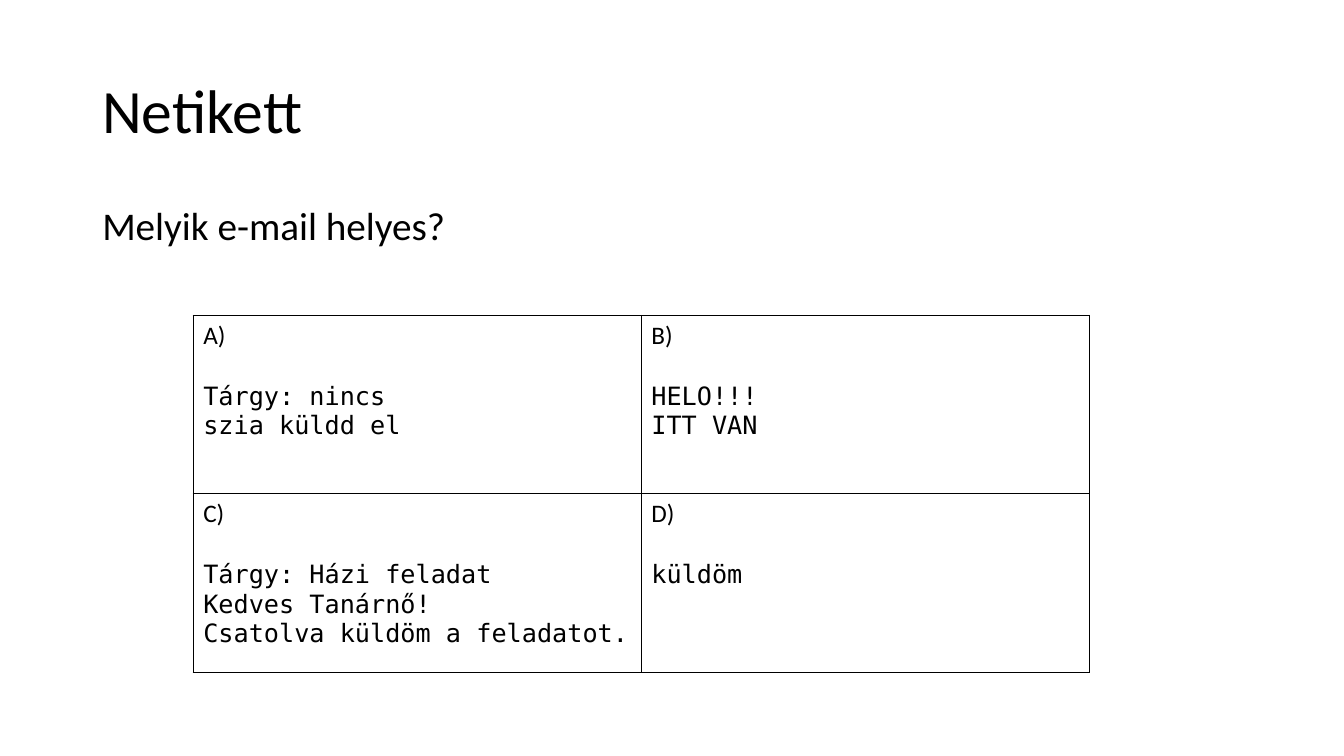
from dataclasses import dataclass

from lxml.etree import SubElement
from pptx import Presentation
from pptx.dml.color import RGBColor
from pptx.enum.text import MSO_ANCHOR
from pptx.oxml.ns import qn
from pptx.util import Inches, Pt


@dataclass(frozen=True)
class Theme:
    ink: str = "000000"
    paper: str = "FFFFFF"
    text_font: str = "Calibri"
    mail_font: str = "DejaVu Sans Mono"
    title_size: int = 44
    question_size: int = 28
    cell_size: int = 18
    label_gap: int = 22
    border: int = 1


THEME = Theme()

# The slide is a grid of 160 columns by 90 rows
COLUMNS, ROWS = 160, 90
UNIT = Inches(1 / 12)

# Two rows of e-mails, each a label and its lines
EMAILS = [
    [("A)", ["Tárgy: nincs", "szia küldd el"]),
     ("B)", ["HELO!!!", "ITT VAN"])],
    [("C)", ["Tárgy: Házi feladat", "Kedves Tanárnő!", "Csatolva küldöm a feladatot."]),
     ("D)", ["küldöm"])],
]


def place(*box):
    return [round(length * UNIT) for length in box]


def add_span(para, text, size, font):
    span = para.add_run()
    span.text = text
    span.font.size = Pt(size)
    span.font.name = font
    span.font.color.rgb = RGBColor.from_string(THEME.ink)


def add_line(page, box, text, size, anchor):
    frame = page.shapes.add_textbox(*place(*box)).text_frame
    frame.word_wrap = True
    frame.vertical_anchor = anchor
    para = frame.paragraphs[0]
    para.line_spacing = 0.9
    add_span(para, text, size, THEME.text_font)


def add_borders(cell):
    properties = cell._tc.get_or_add_tcPr()
    for side in ("lnL", "lnR", "lnT", "lnB"):
        line = SubElement(properties, qn(f"a:{side}"), w=str(Pt(THEME.border)))
        fill = SubElement(line, qn("a:solidFill"))
        SubElement(fill, qn("a:srgbClr"), val=THEME.ink)


def fill_cell(cell, label, lines):
    add_borders(cell)
    cell.fill.background()
    # Label
    para = cell.text_frame.paragraphs[0]
    para.space_after = Pt(THEME.label_gap)
    add_span(para, label, THEME.cell_size, THEME.text_font)
    # Message
    para = cell.text_frame.add_paragraph()
    for number, line in enumerate(lines):
        if number:
            para.add_line_break()
        add_span(para, line, THEME.cell_size, THEME.mail_font)


def add_email_table(page, box, emails):
    table = page.shapes.add_table(len(emails), len(emails[0]), *place(*box)).table
    table.first_row = False
    table.horz_banding = False
    for row, row_emails in enumerate(emails):
        for column, (label, lines) in enumerate(row_emails):
            fill_cell(table.cell(row, column), label, lines)


def add_quiz_slide(deck):
    page = deck.slides.add_slide(deck.slide_layouts[6])
    page.background.fill.solid()
    page.background.fill.fore_color.rgb = RGBColor.from_string(THEME.paper)
    # Title and question share the side margins
    margin = 11
    width = COLUMNS - 2 * margin
    add_line(page, (margin, 4.8, width, 17.4), "Netikett",
             THEME.title_size, MSO_ANCHOR.MIDDLE)
    add_line(page, (margin, 24, width, 57), "Melyik e-mail helyes?",
             THEME.question_size, MSO_ANCHOR.TOP)
    # E-mails to choose from
    add_email_table(page, (23, 37.55, 106.7, 42.5), EMAILS)


def main():
    deck = Presentation()
    deck.slide_width, deck.slide_height = place(COLUMNS, ROWS)
    add_quiz_slide(deck)
    deck.save("out.pptx")


if __name__ == "__main__":
    main()
